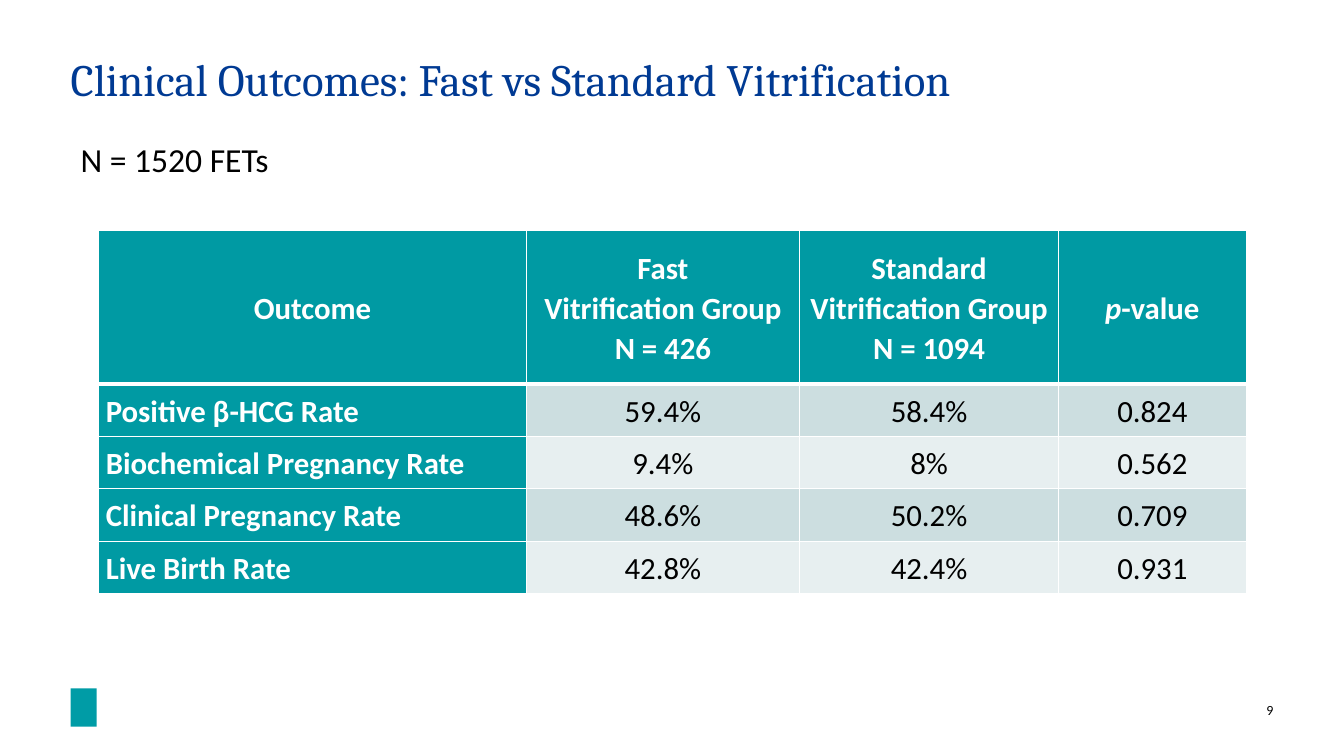
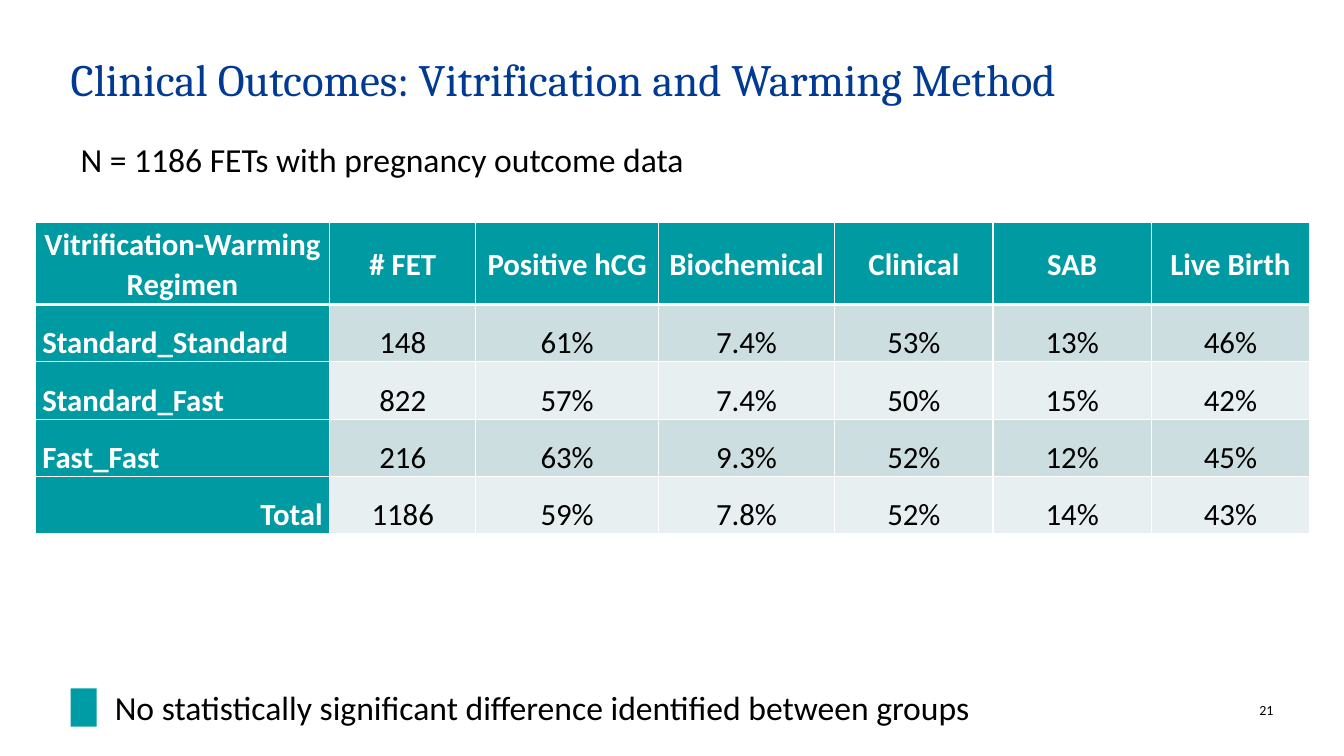
from dataclasses import dataclass

from lxml import etree
from pptx import Presentation
from pptx import util as u
from pptx.dml.color import RGBColor
from pptx.enum import shapes, text
from pptx.oxml.ns import qn

PX = u.Inches(1) // 100
LEFT, CENTER, RIGHT = text.PP_ALIGN.LEFT, text.PP_ALIGN.CENTER, text.PP_ALIGN.RIGHT
MIDDLE, BOTTOM = text.MSO_ANCHOR.MIDDLE, text.MSO_ANCHOR.BOTTOM


@dataclass(frozen=True)
class Theme:
    title_color: str = "003A93"
    body_color: str = "000000"
    white: str = "FFFFFF"
    emblem: str = "009CA6"
    header: str = "009AA3"
    bands: tuple = ("CCDEE0", "E7EFF0")
    title_font: str = "Cambria"
    body_font: str = "Calibri"
    title_size: int = 32
    note_size: int = 24
    table_size: int = 22
    number_size: int = 10
    thin: int = 1
    thick: int = 3


class Deck:
    def __init__(self, theme, width, height):
        self.theme = theme
        self.presentation = Presentation()
        self.presentation.slide_width = width * PX
        self.presentation.slide_height = height * PX
        self.slide = None

    def set_text(self, text_frame, content, size, color=None, font=None,
                 bold=False, align=LEFT, spacing=1.0):
        """Fill a text frame: one paragraph a line, *starred* parts in italics."""
        text_frame.text = content.replace("*", "")
        for paragraph, line in zip(text_frame.paragraphs, content.split("\n")):
            paragraph.alignment = align
            paragraph.line_spacing = spacing
            if "*" in line:
                paragraph.clear()
                for index, part in enumerate(line.split("*")):
                    if part:
                        run = paragraph.add_run()
                        run.text = part
                        run.font.italic = index % 2 == 1
            for run in paragraph.runs:
                run.font.name = font or self.theme.body_font
                run.font.size = u.Pt(size)
                run.font.bold = bold
                run.font.color.rgb = RGBColor.from_string(color or self.theme.body_color)

    @staticmethod
    def inset(target, horizontal, vertical):
        target.margin_left = target.margin_right = horizontal * PX
        target.margin_top = target.margin_bottom = vertical * PX

    def new_slide(self, title, number):
        """Start a slide with its title, emblem and page number."""
        theme = self.theme
        self.slide = self.presentation.slides.add_slide(self.presentation.slide_layouts[5])
        shape = self.slide.shapes.title
        shape.left, shape.top, shape.width, shape.height = (
            length * PX for length in (70, 57, 1192, 105))
        frame = shape.text_frame
        frame.auto_size = text.MSO_AUTO_SIZE.NONE
        frame.vertical_anchor = text.MSO_ANCHOR.TOP
        self.inset(frame, 0, 0)
        self.set_text(frame, title, theme.title_size, theme.title_color,
                      theme.title_font, spacing=0.9)
        self.emblem(70, 683, 26, 38)
        self.text_box(str(number), 1225, 696, 38, 17, theme.number_size, RIGHT, (0, 0))

    def emblem(self, left, top, width, height):
        shape = self.slide.shapes.add_shape(
            shapes.MSO_SHAPE.RECTANGLE, left * PX, top * PX, width * PX, height * PX)
        shape.shadow.inherit = False
        shape.fill.solid()
        shape.fill.fore_color.rgb = RGBColor.from_string(self.theme.emblem)
        shape.line.fill.background()

    def text_box(self, content, left, top, width, height, size=None,
                 align=LEFT, insets=(10, 5)):
        box = self.slide.shapes.add_textbox(left * PX, top * PX, width * PX, height * PX)
        box.text_frame.word_wrap = True
        self.inset(box.text_frame, *insets)
        self.set_text(box.text_frame, content, size or self.theme.note_size, align=align)

    def borders(self, cell, top, bottom):
        properties = cell._tc.get_or_add_tcPr()
        widths = {"lnL": self.theme.thin, "lnR": self.theme.thin, "lnT": top, "lnB": bottom}
        for side, width in widths.items():
            line = etree.SubElement(properties, qn(f"a:{side}"), w=str(u.Pt(width)))
            fill = etree.SubElement(line, qn("a:solidFill"))
            etree.SubElement(fill, qn("a:srgbClr"), val=self.theme.white)

    def table(self, rows, left, top, columns, heights, insets, body_anchor):
        """Table with a header row, a label column and banded values."""
        theme = self.theme
        table = self.slide.shapes.add_table(
            len(rows), len(columns), left * PX, top * PX,
            sum(columns) * PX, sum(heights) * PX).table
        table.first_col = True
        table.horz_banding = False
        for column, width in zip(table.columns, columns):
            column.width = width * PX
        for row_index, (row, values) in enumerate(zip(table.rows, rows)):
            row.height = heights[row_index] * PX
            for column_index, (cell, value) in enumerate(zip(row.cells, values)):
                is_header, is_label = row_index == 0, column_index == 0
                strong = is_header or is_label
                self.borders(cell, theme.thick if row_index == 1 else theme.thin,
                             theme.thick if is_header else theme.thin)
                cell.fill.solid()
                cell.fill.fore_color.rgb = RGBColor.from_string(
                    theme.header if strong else theme.bands[(row_index - 1) % 2])
                cell.vertical_anchor = MIDDLE if is_header else body_anchor
                self.inset(cell, *insets)
                if is_label and not is_header:
                    cell.margin_left = 7 * PX
                self.set_text(cell.text_frame, value, theme.table_size,
                              theme.white if strong else theme.body_color, bold=strong,
                              align=LEFT if is_label and not is_header else CENTER,
                              spacing=1.07)
        return table


def vitrification_slide(deck):
    deck.new_slide("Clinical Outcomes: Fast vs Standard Vitrification", 9)
    rows = [
        ("Outcome", "Fast\nVitrification Group\nN = 426",
         "Standard Vitrification Group\nN = 1094", "*p*-value"),
        ("Positive β-HCG Rate", "59.4%", "58.4%", "0.824"),
        ("Biochemical Pregnancy Rate", "9.4%", "8%", "0.562"),
        ("Clinical Pregnancy Rate", "48.6%", "50.2%", "0.709"),
        ("Live Birth Rate", "42.8%", "42.4%", "0.931"),
    ]
    deck.table(rows, 98, 229, [424, 271, 257, 186], [152] + [52] * 4, (2, 2), MIDDLE)
    deck.text_box("N = 1520 FETs", 70, 133, 961, 50)


def warming_slide(deck):
    deck.new_slide("Clinical Outcomes: Vitrification and Warming Method", 21)
    rows = [
        ("Vitrification-Warming\nRegimen", "# FET", "Positive hCG", "Biochemical",
         "Clinical", "SAB", "Live Birth"),
        ("Standard_Standard", "148", "61%", "7.4%", "53%", "13%", "46%"),
        ("Standard_Fast", "822", "57%", "7.4%", "50%", "15%", "42%"),
        ("Fast_Fast", "216", "63%", "9.3%", "52%", "12%", "45%"),
        ("Total", "1186", "59%", "7.8%", "52%", "14%", "43%"),
    ]
    table = deck.table(rows, 35, 221, [292, 145, 181, 175] + [157] * 3,
                       [81] + [57] * 4, (7, 0), BOTTOM)
    table.cell(4, 0).text_frame.paragraphs[0].alignment = RIGHT
    deck.text_box("N = 1186 FETs with pregnancy outcome data", 70, 133, 1192, 50)
    deck.text_box("No statistically significant difference identified between groups",
                  104, 677, 908, 50)


def main():
    deck = Deck(Theme(), 1333, 750)
    vitrification_slide(deck)
    warming_slide(deck)
    deck.presentation.save("out.pptx")


if __name__ == "__main__":
    main()
